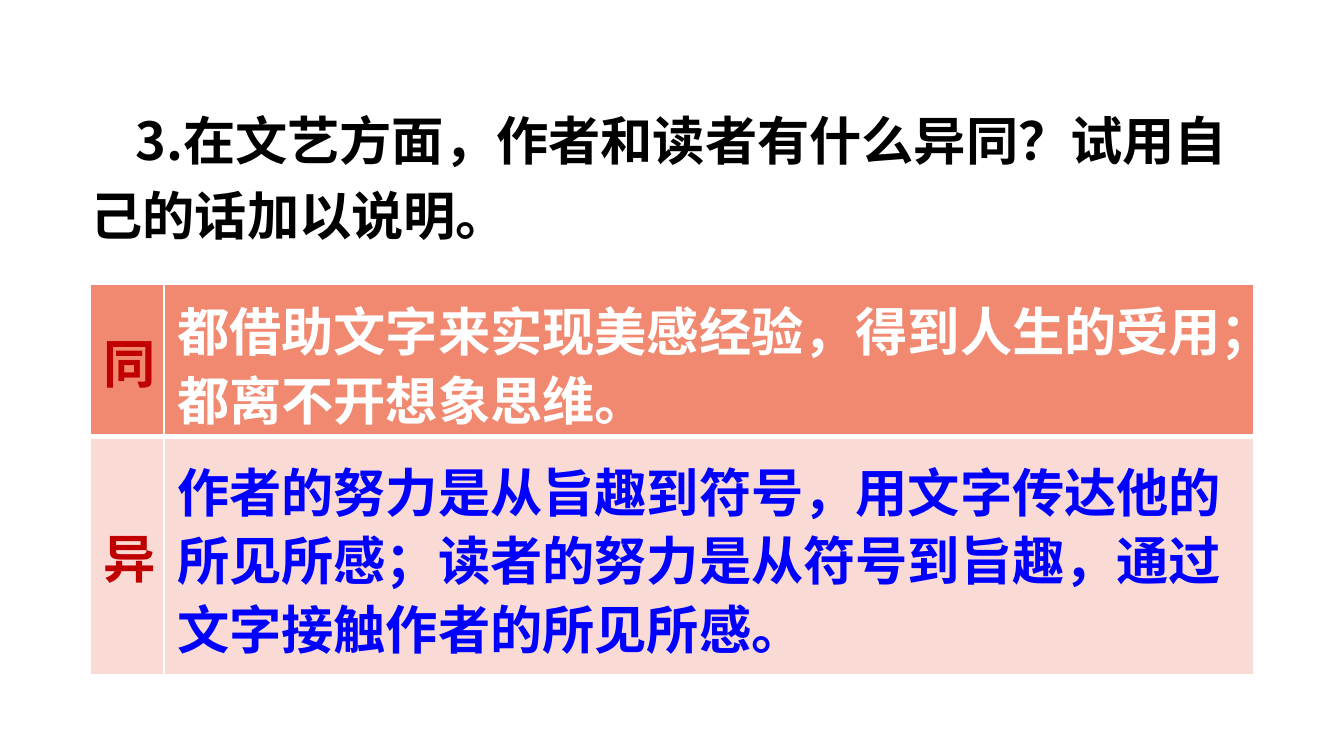
from lxml.etree import SubElement
from pptx import Presentation
from pptx.dml.color import RGBColor
from pptx.enum.text import MSO_ANCHOR, MSO_AUTO_SIZE, PP_ALIGN
from pptx.oxml.ns import qn
from pptx.util import Emu, Pt

FONT = "Noto Sans CJK SC"
BLACK = RGBColor(0x00, 0x00, 0x00)
WHITE = RGBColor(0xFF, 0xFF, 0xFF)
BLUE = RGBColor(0x00, 0x00, 0xFF)
RED = RGBColor(0xC0, 0x00, 0x00)
CORAL = RGBColor(0xF1, 0x88, 0x70)
BLUSH = RGBColor(0xFA, 0xDA, 0xD5)

QUESTION = "3.在文艺方面，作者和读者有什么异同？试用自己的话加以说明。"
ROWS = [
    {"label": "同", "fill": CORAL, "height": 153, "color": WHITE,
     "answer": "都借助文字来实现美感经验，得到人生的受用；都离不开想象思维。",
     "answer_top": 286, "answer_height": 153},
    {"label": "异", "fill": BLUSH, "height": 238, "color": BLUE,
     "answer": "作者的努力是从旨趣到符号，用文字传达他的所见所感；"
               "读者的努力是从符号到旨趣，通过文字接触作者的所见所感。",
     "answer_top": 446, "answer_height": 222},
]
COLUMN_WIDTHS = [74, 1090]
TABLE_LEFT, TABLE_TOP = 90, 284
ANSWER_LEFT, ANSWER_WIDTH = 164, 1079
QUESTION_BOX = (77, 89, 1212, 165)
QUESTION_INDENT = 45
QUESTION_PITCH, ANSWER_PITCH = Pt(40.2), Pt(36.7)


def px(length):
    return Emu(round(length * 914400 / 134.4))


def write(frame, text, color, line_spacing=None):
    """Put one bold paragraph in the frame and return it."""
    paragraph = frame.paragraphs[0]
    paragraph.alignment = PP_ALIGN.LEFT
    paragraph.line_spacing = line_spacing
    run = paragraph.add_run()
    run.text = text
    formats = {"name": FONT, "size": Pt(28), "bold": True}
    for name, value in formats.items():
        setattr(run.font, name, value)
    run.font.color.rgb = color
    SubElement(run.font._element, qn("a:ea"), typeface=FONT)
    return paragraph


def format_frame(frame, anchor):
    formats = {"word_wrap": True, "auto_size": MSO_AUTO_SIZE.NONE,
               "vertical_anchor": anchor,
               "margin_left": Pt(7.2), "margin_right": Pt(7.2),
               "margin_top": Pt(3.6), "margin_bottom": Pt(3.6)}
    for name, value in formats.items():
        setattr(frame, name, value)


def set_borders(cell, widths):
    """Give the cell white borders; the lines must precede its fill."""
    properties = cell._tc.get_or_add_tcPr()
    for side, width in widths.items():
        line = SubElement(properties, qn(f"a:ln{side}"), w=str(Pt(width)))
        fill = SubElement(line, qn("a:solidFill"))
        SubElement(fill, qn("a:srgbClr"), val=str(WHITE))


def add_question(slide):
    title = slide.shapes.title
    title.left, title.top, title.width, title.height = map(px, QUESTION_BOX)
    format_frame(title.text_frame, MSO_ANCHOR.TOP)
    paragraph = write(title.text_frame, QUESTION, BLACK, QUESTION_PITCH)
    paragraph.space_before = Pt(0)
    paragraph._p.get_or_add_pPr().set("indent", str(px(QUESTION_INDENT)))


def add_comparison(slide):
    width, height = sum(COLUMN_WIDTHS), sum(row["height"] for row in ROWS)
    table = slide.shapes.add_table(
        len(ROWS), len(COLUMN_WIDTHS),
        *map(px, (TABLE_LEFT, TABLE_TOP, width, height))).table
    for column, column_width in zip(table.columns, COLUMN_WIDTHS):
        column.width = px(column_width)
    for index, (table_row, row) in enumerate(zip(table.rows, ROWS)):
        table_row.height = px(row["height"])
        top, bottom = (1, 3) if index == 0 else (3, 1)
        for cell in table_row.cells:
            set_borders(cell, {"L": 1, "R": 1, "T": top, "B": bottom})
            cell.fill.solid()
            cell.fill.fore_color.rgb = row["fill"]
            cell.vertical_anchor = MSO_ANCHOR.MIDDLE
        write(table_row.cells[0].text_frame, row["label"], RED)


def add_answer(slide, row):
    box = slide.shapes.add_textbox(*map(px, (
        ANSWER_LEFT, row["answer_top"], ANSWER_WIDTH, row["answer_height"])))
    format_frame(box.text_frame, MSO_ANCHOR.MIDDLE)
    write(box.text_frame, row["answer"], row["color"], ANSWER_PITCH)


def main():
    presentation = Presentation()
    presentation.slide_width, presentation.slide_height = px(1344), px(756)
    slide = presentation.slides.add_slide(presentation.slide_layouts[5])
    add_question(slide)
    add_comparison(slide)
    for row in ROWS:
        add_answer(slide, row)
    presentation.save("out.pptx")


if __name__ == "__main__":
    main()
